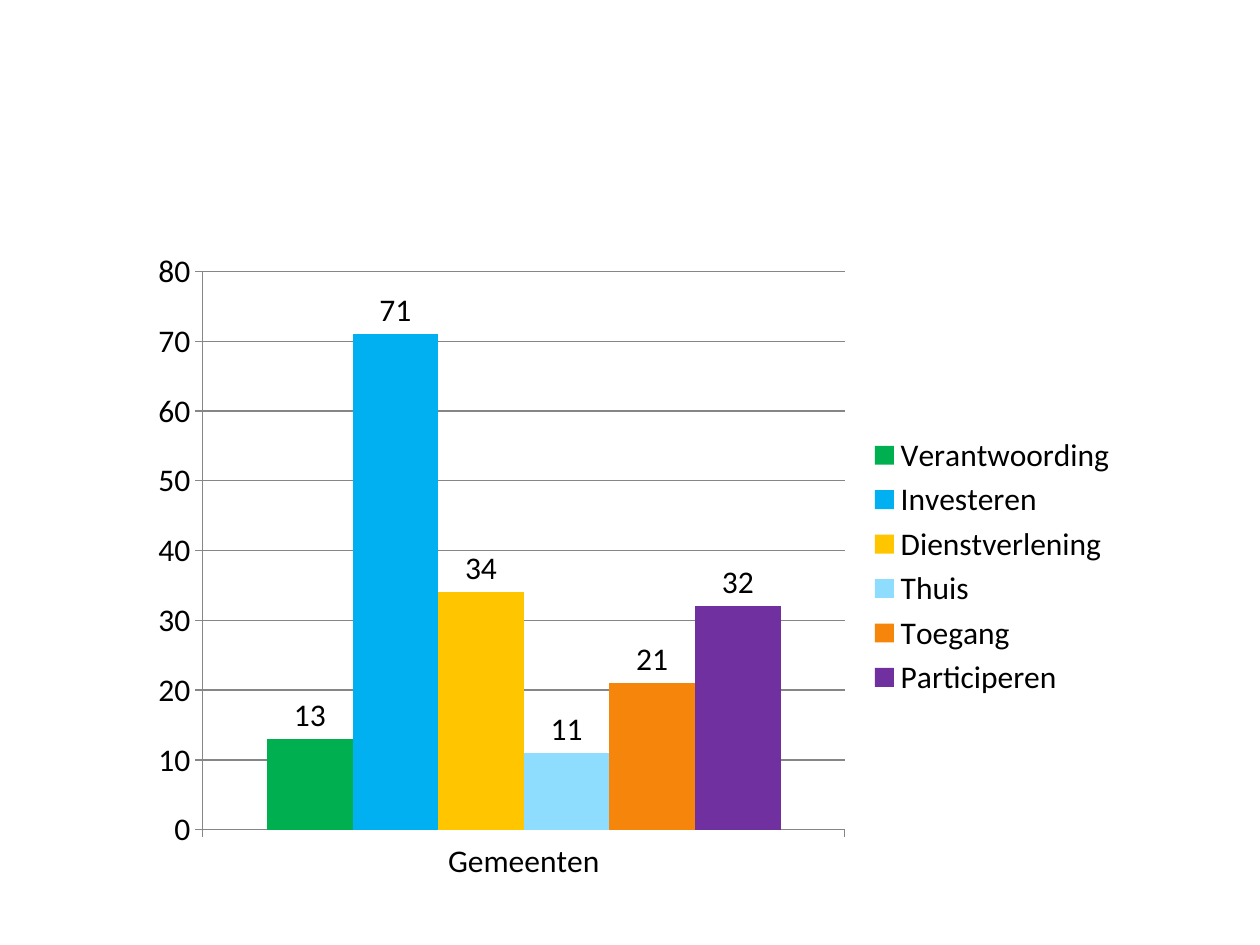
from pptx import Presentation
from pptx.chart.data import CategoryChartData
from pptx.dml.color import RGBColor
from pptx.enum.chart import XL_CHART_TYPE as CT, XL_LABEL_POSITION as LP
from pptx.enum.chart import XL_LEGEND_POSITION as LegPos, XL_TICK_MARK as Tick
from pptx.util import Inches, Pt

COLORS = {"text": "000000", "axis": "868686", "Verantwoording": "00B050",
          "Investeren": "00B0F0", "Dienstverlening": "FFC600", "Thuis": "8EDDFF",
          "Toegang": "F5860B", "Participeren": "7030A0"}
VALUES = {"Verantwoording": 13, "Investeren": 71, "Dienstverlening": 34,
          "Thuis": 11, "Toegang": 21, "Participeren": 32}


def rgb(name):
    """Return the named colour."""
    return RGBColor.from_string(COLORS[name])


def set_attrs(obj, **formats):
    """Set each format value on an object."""
    for key, value in formats.items():
        setattr(obj, key, value)


def style_line(line):
    """Draw a thin grey axis or grid line."""
    line.color.rgb = rgb("axis")
    line.width = Pt(0.75)


def add_theme_chart(s, x, y, w, h):
    """Place the column chart of themes in the given box."""
    data = CategoryChartData()
    data.categories = ["Gemeenten"]
    for name, value in VALUES.items():
        data.add_series(name, [value])
    box = [Inches(v) for v in (x, y, w, h)]
    chart = s.shapes.add_chart(CT.COLUMN_CLUSTERED, *box, data).chart
    set_attrs(chart, has_title=False, has_legend=True)
    set_attrs(chart.font, name="Calibri", size=Pt(18))
    chart.font.color.rgb = rgb("text")
    set_attrs(chart.legend, position=LegPos.RIGHT, include_in_layout=False)

    for axis in (chart.category_axis, chart.value_axis):
        set_attrs(axis, major_tick_mark=Tick.OUTSIDE, minor_tick_mark=Tick.NONE)
        style_line(axis.format.line)
    set_attrs(chart.value_axis, minimum_scale=0, maximum_scale=80,
              major_unit=10, has_major_gridlines=True)
    style_line(chart.value_axis.major_gridlines.format.line)

    plot = chart.plots[0]
    set_attrs(plot, gap_width=150, overlap=0, vary_by_categories=False)
    for series in plot.series:
        series.format.fill.solid()
        series.format.fill.fore_color.rgb = rgb(series.name)
        set_attrs(series, invert_if_negative=False)
        set_attrs(series.data_labels, show_value=True, position=LP.OUTSIDE_END)


def main():
    """Build the slide and save it."""
    prs = Presentation()
    set_attrs(prs, slide_width=Inches(10), slide_height=Inches(7.5))
    s = prs.slides.add_slide(prs.slide_layouts[6])
    add_theme_chart(s, 1.1, 1.9, 7.87, 5.19)
    prs.save("out.pptx")


if __name__ == "__main__":
    main()
